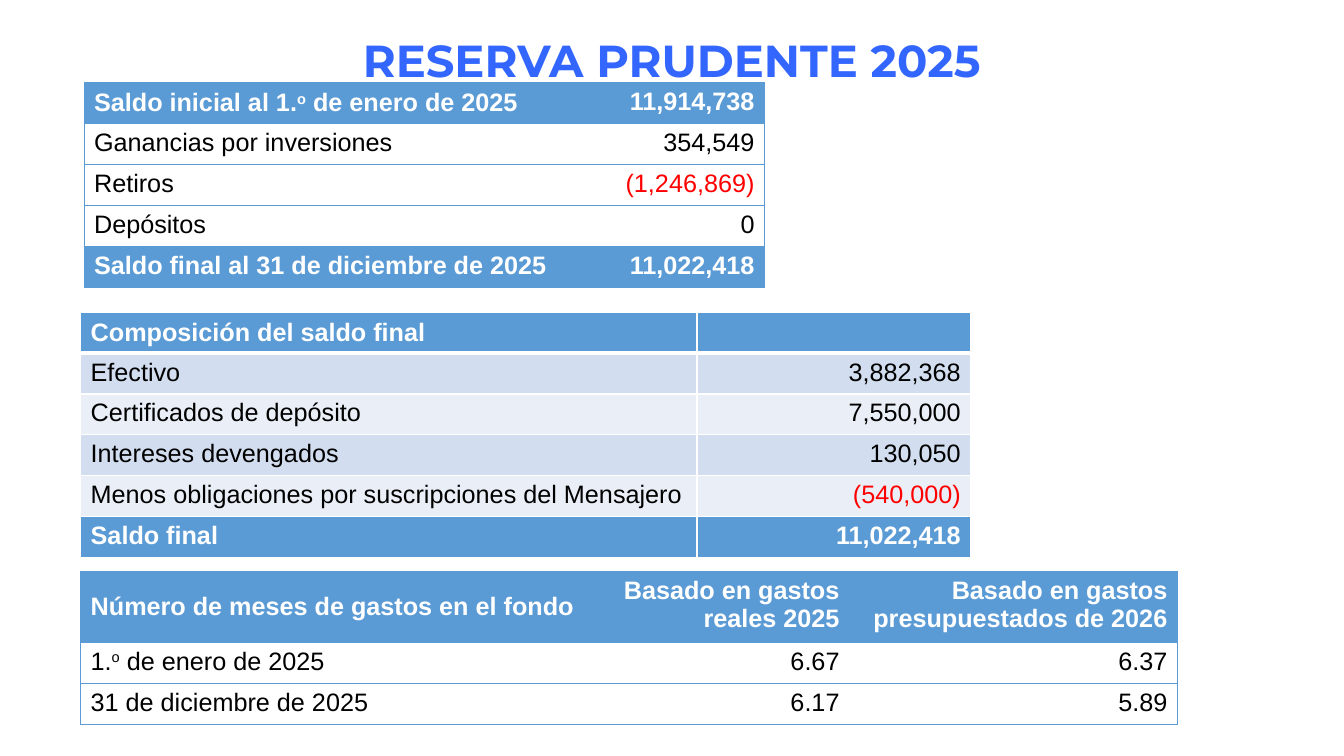
import pptx
import pptx.dml.color
import pptx.enum.text
import pptx.oxml
import pptx.oxml.ns
import pptx.util

RGB = pptx.dml.color.RGBColor
ALIGN = pptx.enum.text.PP_ALIGN
ANCHOR = pptx.enum.text.MSO_ANCHOR
WHITE = RGB(0xFF, 0xFF, 0xFF)
BLACK = RGB(0x00, 0x00, 0x00)
RED = RGB(0xFF, 0x00, 0x00)
ROYAL = RGB(0x33, 0x66, 0xFF)
BLUE = RGB(0x5B, 0x9B, 0xD5)
BANDS = (RGB(0xD2, 0xDE, 0xEF), RGB(0xEA, 0xEF, 0xF7))

deck = pptx.Presentation()
deck.slide_width = pptx.util.Inches(13.33)
deck.slide_height = pptx.util.Inches(7.5)


def share(left, top, width, height):
    wide, high = deck.slide_width / 100, deck.slide_height / 100
    return [int(n) for n in (left * wide, top * high, width * wide, height * high)]


def split(total, weights):
    return [int(total * n / sum(weights)) for n in weights]


def write(frame, text, size=18, face="Arial", color=BLACK, bold=False,
          align=ALIGN.LEFT, space=None):
    para = frame.paragraphs[0]
    para.alignment = align
    para.line_spacing = space
    para.font.size = pptx.util.Pt(size)
    for i, part in enumerate(text.split("^")):
        if not part:
            continue
        run = para.add_run()
        run.text = part
        run.font.size = pptx.util.Pt(size)
        run.font.name = face
        run.font.bold = bold
        run.font.color.rgb = color
        if i % 2:
            run.font._element.set("baseline", "30000")


def edge(cell, side, color, width):
    paint = f'<a:solidFill><a:srgbClr val="{color}"/></a:solidFill>' if width else "<a:noFill/>"
    line = pptx.oxml.parse_xml(
        f'<a:ln{side} {pptx.oxml.ns.nsdecls("a")} w="{int(pptx.util.Pt(width))}">'
        f"{paint}</a:ln{side}>")
    cell._tc.get_or_add_tcPr().append(line)


def title(slide, box, text):
    frame = slide.shapes.add_textbox(*box).text_frame
    frame.word_wrap = True
    frame.vertical_anchor = ANCHOR.MIDDLE
    write(frame, text, size=32, face="Montserrat", color=ROYAL, bold=True,
          align=ALIGN.CENTER, space=0.9)


def grid(slide, box, cols, rows, data, banded=False, total=True):
    table = slide.shapes.add_table(len(data), len(cols), *box).table
    for col, width in zip(table.columns, split(box[2], cols)):
        col.width = width
    for row, height in zip(table.rows, split(box[3], rows)):
        row.height = height
    last = len(data) - 1
    rule, thin = (WHITE, 1) if banded else (BLUE, 0.5)
    for r, line in enumerate(data):
        strong = r == 0 or (total and r == last)
        for c, text in enumerate(line):
            cell = table.cell(r, c)
            edge(cell, "L", rule, thin if banded or c == 0 else 0)
            edge(cell, "R", rule, thin if banded or c == len(cols) - 1 else 0)
            edge(cell, "T", rule, 3 if banded and r == 1 else thin)
            edge(cell, "B", rule, 3 if banded and r == 0 else thin)
            if strong or banded:
                cell.fill.solid()
                cell.fill.fore_color.rgb = BLUE if strong else BANDS[(r - 1) % 2]
            else:
                cell.fill.background()
            if r == 0 and c == 0:
                cell.vertical_anchor = ANCHOR.MIDDLE
            color = WHITE if strong else RED if text.startswith("(") else BLACK
            write(cell.text_frame, text, color=color, bold=strong,
                  align=ALIGN.RIGHT if c else ALIGN.LEFT)


def main():
    slide = deck.slides.add_slide(deck.slide_layouts[6])
    title(slide, share(0, 0.5, 100, 15.6), "RESERVA PRUDENTE 2025")
    grid(slide, share(6.25, 10.93, 50.64, 27.07), (4.83, 1.92), [1] * 5, [
        ("Saldo inicial al 1.^o^ de enero de 2025", "11,914,738"),
        ("Ganancias por inversiones", "354,549"),
        ("Retiros", "(1,246,869)"),
        ("Depósitos", "0"),
        ("Saldo final al 31 de diciembre de 2025", "11,022,418"),
    ])
    grid(slide, share(6, 41.33, 66.24, 32.4), (6.12, 2.72), [1] * 6, [
        ("Composición del saldo final", ""),
        ("Efectivo", "3,882,368"),
        ("Certificados de depósito", "7,550,000"),
        ("Intereses devengados", "130,050"),
        ("Menos obligaciones por suscripciones del Mensajero", "(540,000)"),
        ("Saldo final", "11,022,418"),
    ], banded=True)
    grid(slide, share(6, 75.6, 81.62, 19.6), (5.04, 2.58, 3.25), (1.6, 1, 1), [
        ("Número de meses de gastos en el fondo", "Basado en gastos reales 2025",
         "Basado en gastos presupuestados de 2026"),
        ("1.^o^ de enero de 2025", "6.67", "6.37"),
        ("31 de diciembre de 2025", "6.17", "5.89"),
    ], total=False)
    deck.save("out.pptx")


if __name__ == "__main__":
    main()
